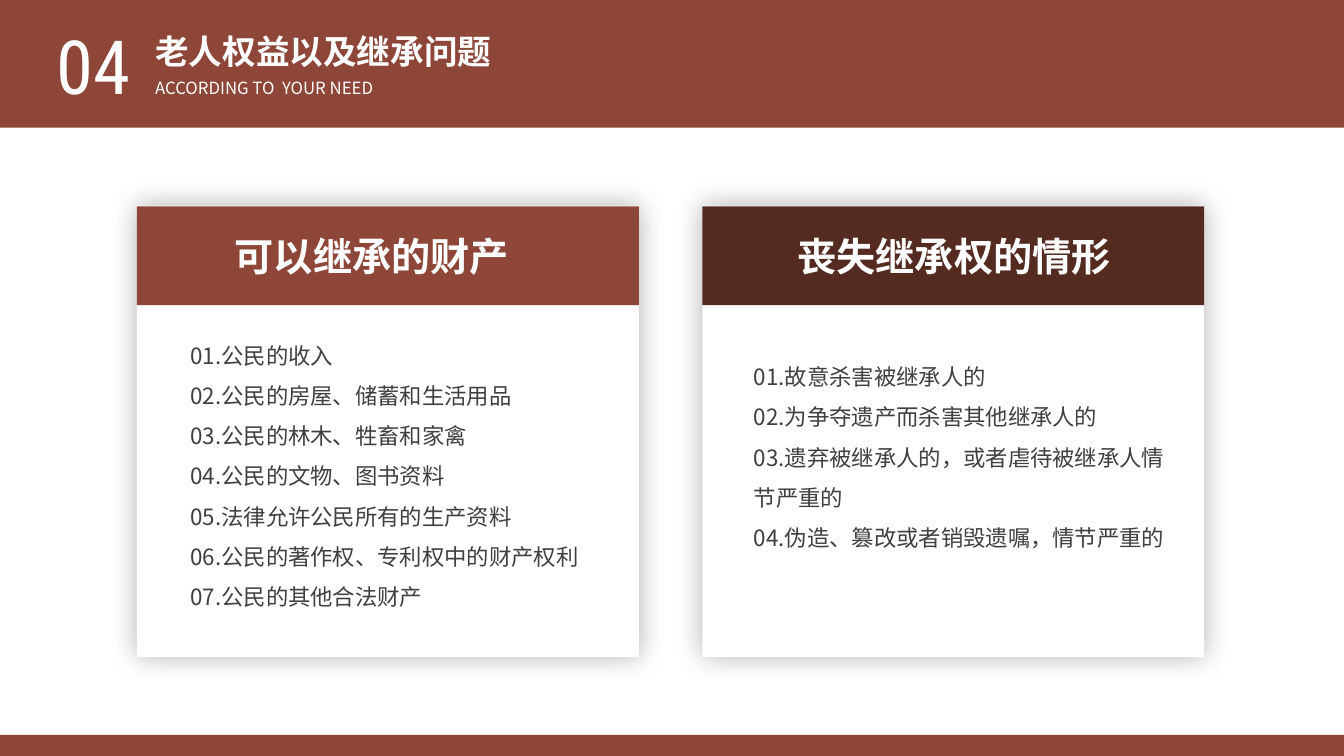
from lxml.etree import SubElement
from pptx import Presentation
from pptx.dml.color import RGBColor
from pptx.enum.shapes import MSO_SHAPE
from pptx.enum.text import MSO_ANCHOR, MSO_AUTO_SIZE, PP_ALIGN
from pptx.oxml.ns import qn
from pptx.util import Cm, Pt

BRICK = "8E4638"
MAROON = "542A21"
WHITE = "FFFFFF"
GREY = "404040"
SANS = "Noto Sans CJK SC"
CONDENSED = "Roboto Condensed"
SLIDE_WIDTH, SLIDE_HEIGHT = 33.87, 19.05
CARD_TOP, CARD_WIDTH, CARD_HEIGHT = 5.18, 12.65, 11.38
HEADER_HEIGHT = 2.49

INHERITABLE = [
    "01.公民的收入",
    "02.公民的房屋、储蓄和生活用品",
    "03.公民的林木、牲畜和家禽",
    "04.公民的文物、图书资料",
    "05.法律允许公民所有的生产资料",
    "06.公民的著作权、专利权中的财产权利",
    "07.公民的其他合法财产",
]
FORFEITING = [
    "01.故意杀害被继承人的",
    "02.为争夺遗产而杀害其他继承人的",
    "03.遗弃被继承人的，或者虐待被继承人情节严重的",
    "04.伪造、篡改或者销毁遗嘱，情节严重的",
]


def colour(value):
    return RGBColor.from_string(value)


def place(item, left, top, width, height):
    item.left, item.top = Cm(left), Cm(top)
    item.width, item.height = Cm(width), Cm(height)


def write(holder, lines, size, ink=WHITE, face=SANS, bold=False,
          align=PP_ALIGN.LEFT, spacing=1.0, wrap=True):
    frame = holder.text_frame
    frame.word_wrap = wrap
    frame.auto_size = MSO_AUTO_SIZE.SHAPE_TO_FIT_TEXT
    frame.vertical_anchor = MSO_ANCHOR.TOP
    for index, line in enumerate(lines):
        paragraph = frame.add_paragraph() if index else frame.paragraphs[0]
        paragraph.alignment = align
        paragraph.line_spacing = spacing
        paragraph.space_before = Pt(0)
        run = paragraph.add_run()
        run.text = line
        run.font.size = Pt(size)
        run.font.bold = bold
        run.font.color.rgb = colour(ink)
        run.font.name = face
        SubElement(run.font._element, qn("a:ea"), typeface=face)


def add_text(slide, box, lines, size, **style):
    holder = slide.shapes.add_textbox(*map(Cm, box))
    write(holder, lines, size, **style)


def add_block(slide, box, fill):
    block = slide.shapes.add_shape(MSO_SHAPE.RECTANGLE, *map(Cm, box))
    block.shadow.inherit = False
    block.fill.solid()
    block.fill.fore_color.rgb = colour(fill)
    block.line.fill.background()
    return block


def add_glow(block, blur, opacity):
    effects = block._element.spPr.find(qn("a:effectLst"))
    shadow = SubElement(effects, qn("a:outerShdw"), blurRad=str(Pt(blur)),
                        dist="0", dir="0", algn="ctr", rotWithShape="0")
    black = SubElement(shadow, qn("a:srgbClr"), val="000000")
    SubElement(black, qn("a:alpha"), val=str(opacity * 1000))


def add_card(slide, left, fill, heading, heading_left, heading_width, items, items_box):
    panel = add_block(slide, (left, CARD_TOP, CARD_WIDTH, CARD_HEIGHT), WHITE)
    add_glow(panel, 19, 29)
    add_block(slide, (left, CARD_TOP + 0.02, CARD_WIDTH, HEADER_HEIGHT), fill)
    add_text(slide, items_box, items, 16, ink=GREY, spacing=1.5)
    add_text(slide, (heading_left, 5.72, heading_width, 1.45), [heading], 28,
             bold=True, align=PP_ALIGN.CENTER, wrap=False)


def add_header(slide):
    title = slide.shapes.title
    bands = [
        add_block(slide, (0, 0, SLIDE_WIDTH, 3.22), BRICK),
        add_block(slide, (0, 18.52, SLIDE_WIDTH, 0.53), BRICK),
    ]
    for band in bands:
        title._element.addprevious(band._element)
    place(title, 3.66, 0.66, 9.5, 1.28)
    write(title, ["老人权益以及继承问题"], 24, bold=True)
    add_text(slide, (3.66, 1.73, 6.45, 0.86), ["ACCORDING TO  YOUR NEED"], 12,
             spacing=1.2, wrap=False)
    add_text(slide, (1.17, 0.38, 2.46, 2.54), ["04"], 53.4, face=CONDENSED, wrap=False)


def main():
    deck = Presentation()
    deck.slide_width, deck.slide_height = Cm(SLIDE_WIDTH), Cm(SLIDE_HEIGHT)
    slide = deck.slides.add_slide(deck.slide_layouts[5])
    add_header(slide)
    add_card(slide, 3.45, BRICK, "可以继承的财产", 5.66, 7.42,
             INHERITABLE, (4.55, 8.15, 10.46, 7.44))
    add_card(slide, 17.7, MAROON, "丧失继承权的情形", 19.84, 8.41,
             FORFEITING, (18.75, 8.69, 10.97, 5.38))
    deck.save("out.pptx")


if __name__ == "__main__":
    main()
